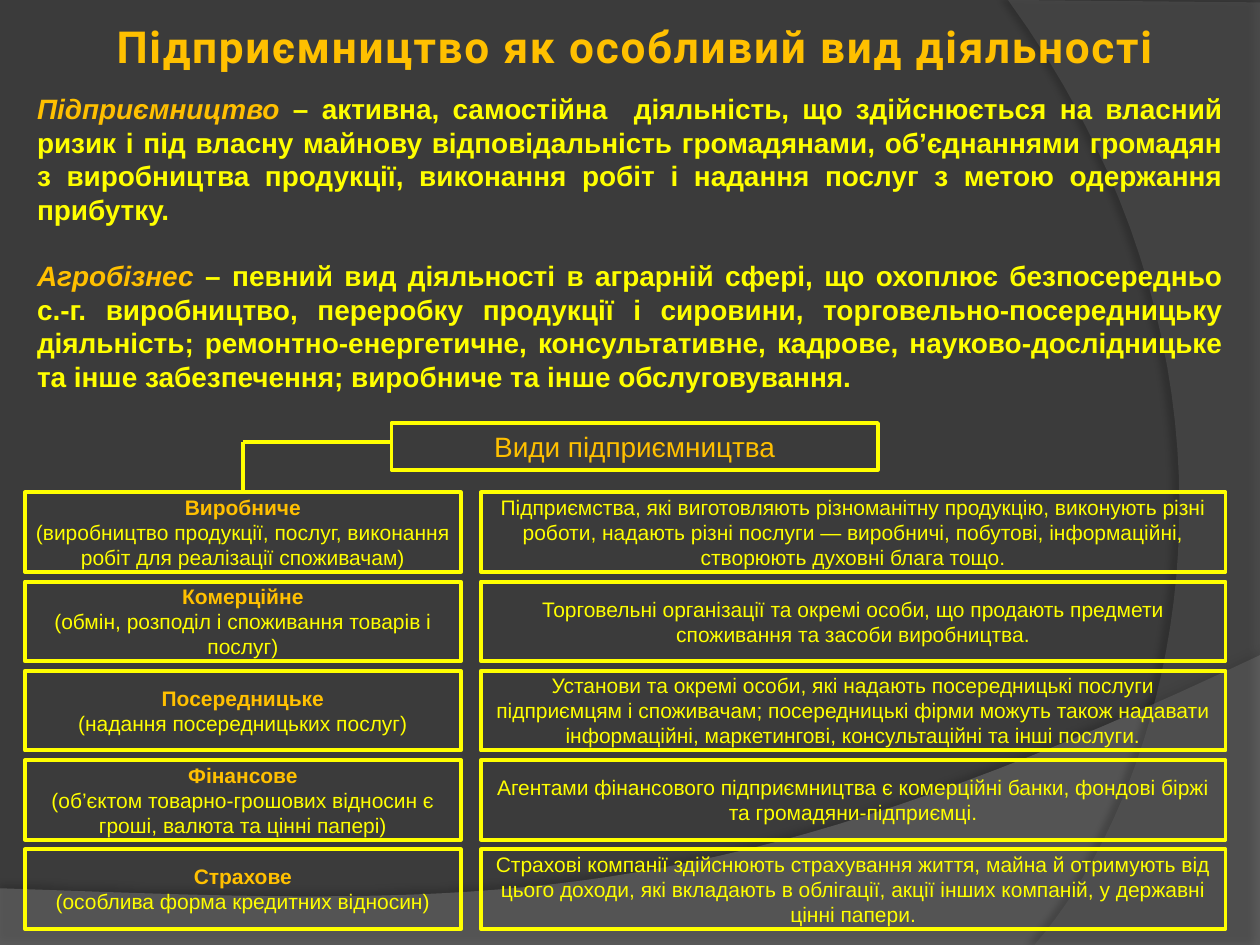
from lxml.etree import SubElement
from pptx import Presentation
from pptx.dml.color import RGBColor
from pptx.enum.shapes import MSO_CONNECTOR, MSO_SHAPE
from pptx.enum.text import MSO_ANCHOR, PP_ALIGN
from pptx.oxml.ns import qn
from pptx.util import Pt

COLORS = {
    "background": "3B3B3B",
    "floor": "7F7F7F",
    "side": "5E5E5E",
    "shadow": "000000",
    "accent": "FFC000",
    "text": "FFFF00",
}
LINE_HEIGHT = 1.195
BORDER = 2.25

DEFINITIONS = [
    ("Підприємництво", " – активна, самостійна  діяльність, що здійснюється на власний ризик і під власну майнову відповідальність громадянами, об’єднаннями громадян з виробництва продукції, виконання робіт і надання послуг з метою одержання прибутку."),
    ("Агробізнес", " – певний вид діяльності в аграрній сфері, що охоплює безпосередньо с.-г. виробництво, переробку продукції і сировини, торговельно-посередницьку діяльність; ремонтно-енергетичне, консультативне, кадрове, науково-дослідницьке та інше забезпечення; виробниче та інше обслуговування."),
]
KINDS = [
    ("Виробниче", "(виробництво продукції, послуг, виконання робіт для реалізації споживачам)",
     "Підприємства, які виготовляють різноманітну продукцію, виконують різні роботи, надають різні послуги — виробничі, побутові, інформаційні, створюють духовні блага тощо."),
    ("Комерційне", "(обмін, розподіл і споживання товарів і послуг)",
     "Торговельні організації та окремі особи, що продають предмети споживання та засоби виробництва."),
    ("Посередницьке", "(надання посередницьких послуг)",
     "Установи та окремі особи, які надають посередницькі послуги підприємцям і споживачам; посередницькі фірми можуть також надавати інформаційні, маркетингові, консультаційні та інші послуги."),
    ("Фінансове", "(об’єктом товарно-грошових відносин є гроші, валюта та цінні папері)",
     "Агентами фінансового підприємництва є комерційні банки, фондові біржі та громадяни-підприємці."),
    ("Страхове", "(особлива форма кредитних відносин)",
     "Страхові компанії здійснюють страхування життя, майна й отримують від цього доходи, які вкладають в облігації, акції інших компаній, у державні цінні папери."),
]


def color(name):
    """Return the named colour."""
    return RGBColor.from_string(COLORS[name])


def style(para, size, tint, bold=False, font="Arial", align=PP_ALIGN.CENTER):
    """Set the font, alignment and line height of a paragraph."""
    para.alignment = align
    para.line_spacing = Pt(round(size * LINE_HEIGHT, 1))
    para.font.name = font
    para.font.size = Pt(size)
    para.font.bold = bold
    para.font.color.rgb = color(tint)


def set_frame(shape, inset_x, inset_y, anchor):
    """Set wrapping, insets and anchor, and return the text frame."""
    frame = shape.text_frame
    frame.word_wrap = True
    frame.vertical_anchor = anchor
    frame.margin_left = frame.margin_right = Pt(inset_x)
    frame.margin_top = frame.margin_bottom = Pt(inset_y)
    return frame


def curve(start, first, second, end, steps=40):
    """Return points along a cubic curve, without its start."""
    points = []
    for step in range(1, steps + 1):
        t = step / steps
        weights = ((1 - t) ** 3, 3 * t * (1 - t) ** 2, 3 * t * t * (1 - t), t ** 3)
        points.append(tuple(
            sum(weight * value for weight, value in zip(weights, axis))
            for axis in zip(start, first, second, end)
        ))
    return points


def add_wave(page, points, tint, opacity, shadow_opacity, distance, direction):
    """Draw a translucent outline with a soft shadow."""
    outline = [(Pt(x), Pt(y)) for x, y in points]
    builder = page.shapes.build_freeform(*outline[0])
    builder.add_line_segments(outline[1:], close=True)
    wave = builder.convert_to_shape()
    wave.fill.solid()
    wave.fill.fore_color.rgb = color(tint)
    wave.line.fill.background()
    fill_color = wave._element.spPr.find(qn("a:solidFill"))[0]
    SubElement(fill_color, qn("a:alpha"), val=str(opacity * 1000))
    effects = SubElement(wave._element.spPr, qn("a:effectLst"))
    shadow = SubElement(
        effects, qn("a:outerShdw"), blurRad=str(Pt(4)), dist=str(Pt(distance)),
        dir=str(direction * 60000), algn="ctr", rotWithShape="0",
    )
    shade = SubElement(shadow, qn("a:srgbClr"), val=COLORS["shadow"])
    SubElement(shade, qn("a:alpha"), val=str(shadow_opacity * 1000))


def add_backdrop(page, width, height):
    """Fill the background and draw its two waves."""
    page.background.fill.solid()
    page.background.fill.fore_color.rgb = color("background")
    rise = (width, 374.4)
    floor = [(0, 507.6), (0, height), (width, height), rise]
    floor += curve(rise, (402.5, 524.9), (281.5, 517.7), floor[0])[:-1]
    add_wave(page, floor, "floor", 45, 35, 3.5, 270)
    foot = (591.1, height)
    side = [(width, 1.4), (width, height), foot]
    side += curve(foot, (673.2, 445.7), (733, 216), (576, 0))
    add_wave(page, side, "side", 40, 45, 4, 180)


def add_title(page, left, top, width, height):
    """Write the slide title."""
    box = page.shapes.add_textbox(Pt(left), Pt(top), Pt(width), Pt(height))
    para = set_frame(box, 3.6, 3.6, MSO_ANCHOR.MIDDLE).paragraphs[0]
    span = para.add_run()
    span.text = "Підприємництво як особливий вид діяльності"
    para.alignment = PP_ALIGN.CENTER
    para.font.name = "Roboto"
    para.font.size = Pt(25.2)
    para.font.bold = True
    para.font.color.rgb = color("accent")
    span._r.get_or_add_rPr().set("spc", "100")


def add_definitions(page, left, top, width, height):
    """Write the definitions, each led by its term."""
    box = page.shapes.add_textbox(Pt(left), Pt(top), Pt(width), Pt(height))
    frame = set_frame(box, 7.2, 3.6, MSO_ANCHOR.TOP)
    for index, (term, meaning) in enumerate(DEFINITIONS):
        para = frame.add_paragraph() if index else frame.paragraphs[0]
        style(para, 16, "text", bold=True, align=PP_ALIGN.JUSTIFY)
        para.space_before = Pt(19.1 * index)
        span = para.add_run()
        span.text = term
        span.font.italic = True
        span.font.color.rgb = color("accent")
        para.add_run().text = meaning


def add_frame_box(page, left, top, width, height, lines, size=12, insets=(2.9, 2.9)):
    """Draw an outlined box with lines of (text, colour, bold)."""
    box = page.shapes.add_shape(MSO_SHAPE.RECTANGLE, Pt(left), Pt(top), Pt(width), Pt(height))
    box.shadow.inherit = False
    box.fill.background()
    box.line.color.rgb = color("text")
    box.line.width = Pt(BORDER)
    frame = set_frame(box, *insets, MSO_ANCHOR.MIDDLE)
    for index, (text, tint, bold) in enumerate(lines):
        para = frame.add_paragraph() if index else frame.paragraphs[0]
        para.text = text
        style(para, size, tint, bold)


def add_line(page, start, end):
    """Draw a plain straight line."""
    line = page.shapes.add_connector(MSO_CONNECTOR.STRAIGHT, *map(Pt, start + end))
    line.line.color.rgb = color("text")
    line.line.width = Pt(BORDER)
    SubElement(line._element.spPr, qn("a:effectLst"))


def add_kinds(page, left, top, width, height):
    """Draw the heading, its branch and the rows of kinds."""
    kind_width, column_gap, row_height, first_row = 249.2, 11.4, 45.4, 39.6
    pitch = (height - first_row - row_height) / (len(KINDS) - 1)
    detail_left = left + kind_width + column_gap
    for index, (name, note, detail) in enumerate(KINDS):
        row_top = top + first_row + index * pitch
        add_frame_box(page, left, row_top, kind_width, row_height,
                      [(name, "accent", True), (note, "text", False)])
        add_frame_box(page, detail_left, row_top, width - kind_width - column_gap,
                      row_height, [(detail, "text", False)])
    heading_left = left + 209.5
    add_frame_box(page, heading_left, top, 278, 26.6,
                  [("Види підприємництва", "accent", False)], 16, (7.2, 3.6))
    corner = (left + kind_width / 2, top + 11)
    add_line(page, corner, (heading_left, corner[1]))
    add_line(page, corner, (corner[0], top + first_row))


def main():
    """Build the slide and save it."""
    deck = Presentation()
    deck.slide_width, deck.slide_height = Pt(720), Pt(540)
    page = deck.slides.add_slide(deck.slide_layouts[6])
    add_backdrop(page, 720, 540)
    add_title(page, 20, 9.4, 686, 34)
    add_definitions(page, 14.1, 49, 692, 181.4)
    add_kinds(page, 14.2, 241.8, 686.1, 289)
    deck.save("out.pptx")


if __name__ == "__main__":
    main()
